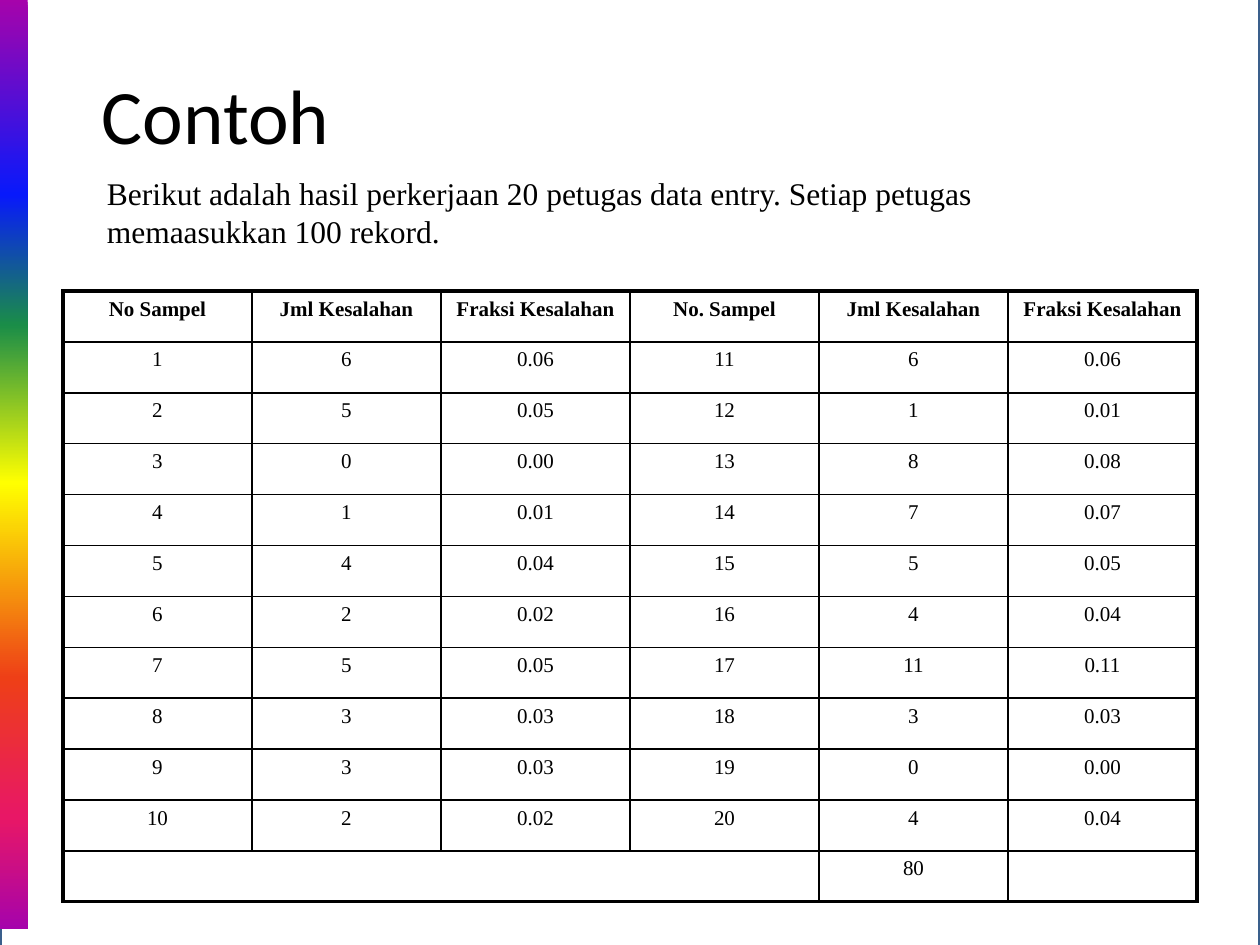
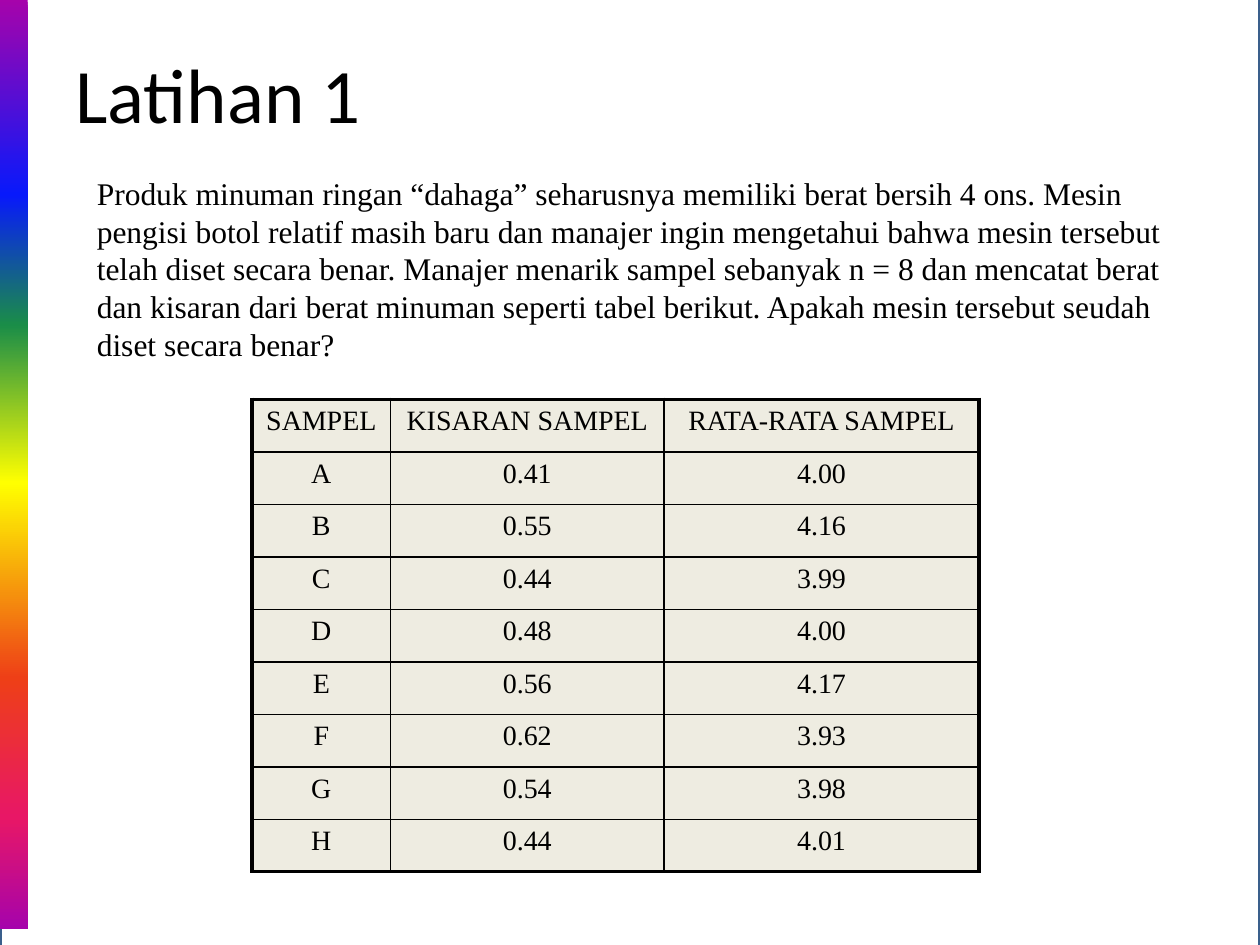
from dataclasses import dataclass

import pptx
import pptx.dml.color
import pptx.enum.shapes
import pptx.enum.text
import pptx.oxml
import pptx.oxml.ns
import pptx.oxml.xmlchemy
import pptx.presentation
import pptx.slide
import pptx.util

Inches = pptx.util.Inches
Pt = pptx.util.Pt
qn = pptx.oxml.ns.qn

BLACK, WHITE, FRAME_BLUE, CREAM = "000000", "FFFFFF", "3A5F8C", "EEECE1"
RAINBOW = {0: "A603AB", 21: "0819FB", 35: "1A8D48", 52: "FFFF00",
           73: "EE3F17", 88: "E81766", 100: "A603AB"}
TITLE_FONT, BODY_FONT = "Calibri", "Times New Roman"
OUTER_LINE, INNER_LINE = 2.25, 1
RECORDS_PER_CLERK = 100
CLERK_ERRORS = [6, 5, 0, 1, 4, 2, 5, 3, 3, 2, 6, 1, 8, 7, 5, 4, 11, 3, 0, 4]
BOTTLE_SAMPLES = [("A", 0.41, 4.00), ("B", 0.55, 4.16), ("C", 0.44, 3.99),
                  ("D", 0.48, 4.00), ("E", 0.56, 4.17), ("F", 0.62, 3.93),
                  ("G", 0.54, 3.98), ("H", 0.44, 4.01)]


@dataclass(frozen=True)
class Box:
    """A position and size in inches."""
    left: float
    top: float
    width: float
    height: float

    def lengths(self) -> tuple[pptx.util.Length, ...]:
        """Return left, top, width and height as lengths."""
        return tuple(Inches(v) for v in (self.left, self.top, self.width, self.height))


@dataclass(frozen=True)
class Passage:
    """A text with its place and style."""
    wording: str
    box: Box
    size: int
    font: str
    anchor: pptx.enum.text.MSO_ANCHOR


@dataclass(frozen=True)
class DataGrid:
    """A ruled table of samples."""
    rows: list[list[str]]
    left: float
    top: float
    height: float
    columns: list[float]
    size: int
    fill: str | None = None
    bold_header: bool = False
    total_span: int = 0


def color(value: str) -> pptx.dml.color.RGBColor:
    """Turn a hex string into a colour."""
    return pptx.dml.color.RGBColor.from_string(value)


def element(tag: str, parent: pptx.oxml.xmlchemy.BaseOxmlElement,
            **attributes: str) -> pptx.oxml.xmlchemy.BaseOxmlElement:
    """Append a new XML element to its parent."""
    child = pptx.oxml.parse_xml(f'<{tag} {pptx.oxml.ns.nsdecls("a")}/>')
    for key, value in attributes.items():
        child.set(key, value)
    parent.append(child)
    return child


def style(paragraph, font: str, size: int, bold: bool = False) -> None:
    """Set the font of a paragraph."""
    paragraph.font.name = font
    paragraph.font.size = Pt(size)
    paragraph.font.bold = bold
    paragraph.font.color.rgb = color(BLACK)


def draw_backdrop(slide: pptx.slide.Slide) -> None:
    """Draw the framed page and the rainbow band at its left."""
    rectangle = pptx.enum.shapes.MSO_SHAPE.RECTANGLE
    page = slide.shapes.add_shape(rectangle, *Box(0, -0.11, 10, 7.8).lengths())
    page.shadow.inherit = False
    page.fill.solid()
    page.fill.fore_color.rgb = color(WHITE)
    page_color = page._element.spPr.find(f'{qn("a:solidFill")}/{qn("a:srgbClr")}')
    element("a:alpha", page_color, val="96000")
    page.line.color.rgb = color(FRAME_BLUE)
    page.line.width = Pt(2)

    band = slide.shapes.add_shape(rectangle, *Box(0, 0, 0.22, 7.37).lengths())
    band.shadow.inherit = False
    band.line.fill.background()
    band.fill.gradient()
    band.fill.gradient_angle = 270
    stops = band._element.spPr.find(f'{qn("a:gradFill")}/{qn("a:gsLst")}')
    for stop in list(stops):
        stops.remove(stop)
    for percent, shade in RAINBOW.items():
        stop = element("a:gs", stops, pos=str(percent * 1000))
        element("a:srgbClr", stop, val=shade)


def draw_passage(slide: pptx.slide.Slide, passage: Passage) -> None:
    """Draw a wrapped text."""
    frame = slide.shapes.add_textbox(*passage.box.lengths()).text_frame
    frame.word_wrap = True
    frame.vertical_anchor = passage.anchor
    frame.text = passage.wording
    style(frame.paragraphs[0], passage.font, passage.size)


def rule_cell(cell, edges: dict[str, float]) -> None:
    """Draw the borders of a cell."""
    properties = cell._tc.get_or_add_tcPr()
    for side, width in edges.items():
        line = element(f"a:ln{side}", properties, w=str(int(Pt(width))))
        element("a:srgbClr", element("a:solidFill", line), val=BLACK)


def draw_grid(slide: pptx.slide.Slide, grid: DataGrid) -> None:
    """Draw a table with a heavy outline and thin inner rules."""
    last_row, last_column = len(grid.rows) - 1, len(grid.columns) - 1
    box = Box(grid.left, grid.top, sum(grid.columns), grid.height)
    table = slide.shapes.add_table(last_row + 1, last_column + 1, *box.lengths()).table
    table.first_row = table.horz_banding = False
    for column, width in zip(table.columns, grid.columns):
        column.width = Inches(width)
    if grid.total_span:
        table.cell(last_row, 0).merge(table.cell(last_row, grid.total_span - 1))
    for r, row in enumerate(grid.rows):
        for c, wording in enumerate(row):
            cell = table.cell(r, c)
            on_outline = {"L": c == 0, "R": c == last_column, "T": r == 0, "B": r == last_row}
            rule_cell(cell, {side: OUTER_LINE if outer else INNER_LINE
                             for side, outer in on_outline.items()
                             if not (cell.is_spanned and side in "LR")})
            if grid.fill:
                cell.fill.solid()
                cell.fill.fore_color.rgb = color(grid.fill)
            else:
                cell.fill.background()
            cell.text = wording
            paragraph = cell.text_frame.paragraphs[0]
            paragraph.alignment = pptx.enum.text.PP_ALIGN.CENTER
            style(paragraph, BODY_FONT, grid.size, grid.bold_header and r == 0)


def clerk_rows() -> list[list[str]]:
    """List the clerks in two halves side by side, with the total below."""
    half = len(CLERK_ERRORS) // 2
    samples = [[str(number), str(errors), f"{errors / RECORDS_PER_CLERK:.2f}"]
               for number, errors in enumerate(CLERK_ERRORS, 1)]
    counts = ["Jml Kesalahan", "Fraksi Kesalahan"]
    header = ["No Sampel", *counts, "No. Sampel", *counts]
    body = [first + second for first, second in zip(samples[:half], samples[half:])]
    return [header, *body, ["", "", "", "", str(sum(CLERK_ERRORS)), ""]]


def bottle_rows() -> list[list[str]]:
    """List the range and mean of each bottle sample."""
    header = ["SAMPEL", "KISARAN SAMPEL", "RATA-RATA SAMPEL"]
    return [header] + [[name, f"{spread:.2f}", f"{mean:.2f}"]
                       for name, spread, mean in BOTTLE_SAMPLES]


def add_page(deck: pptx.presentation.Presentation, title: str, title_box: Box,
             body: str, body_box: Box, grid: DataGrid) -> None:
    """Add a slide with a title, an introduction and a table."""
    anchors = pptx.enum.text.MSO_ANCHOR
    slide = deck.slides.add_slide(deck.slide_layouts[6])
    draw_backdrop(slide)
    draw_passage(slide, Passage(title, title_box, 44, TITLE_FONT, anchors.MIDDLE))
    draw_passage(slide, Passage(body, body_box, 18, BODY_FONT, anchors.TOP))
    draw_grid(slide, grid)


def main() -> None:
    """Build and save the deck."""
    deck = pptx.Presentation()
    deck.slide_width, deck.slide_height = Inches(10), Inches(7.5)
    add_page(
        deck, "Contoh", Box(0.71, 0.28, 8.5, 1.25),
        "Berikut adalah hasil perkerjaan 20 petugas data entry. "
        "Setiap petugas memaasukkan 100 rekord.",
        Box(0.75, 1.33, 8.42, 0.7),
        DataGrid(clerk_rows(), 0.5, 2.31, 4.85, [1.5] * 6, 12,
                 bold_header=True, total_span=4))
    add_page(
        deck, "Latihan 1", Box(0.5, 0.3, 3.25, 0.87),
        "Produk minuman ringan “dahaga” seharusnya memiliki berat bersih 4 ons. "
        "Mesin pengisi botol relatif masih baru dan manajer ingin mengetahui bahwa "
        "mesin tersebut telah diset secara benar. Manajer menarik sampel sebanyak "
        "n = 8 dan mencatat berat dan kisaran dari berat minuman seperti tabel "
        "berikut. Apakah mesin tersebut seudah diset secara benar?",
        Box(0.67, 1.33, 8.83, 1.6),
        DataGrid(bottle_rows(), 2, 3.17, 3.75, [1.1, 2.17, 2.5], 16, fill=CREAM))
    deck.save("out.pptx")


if __name__ == "__main__":
    main()
